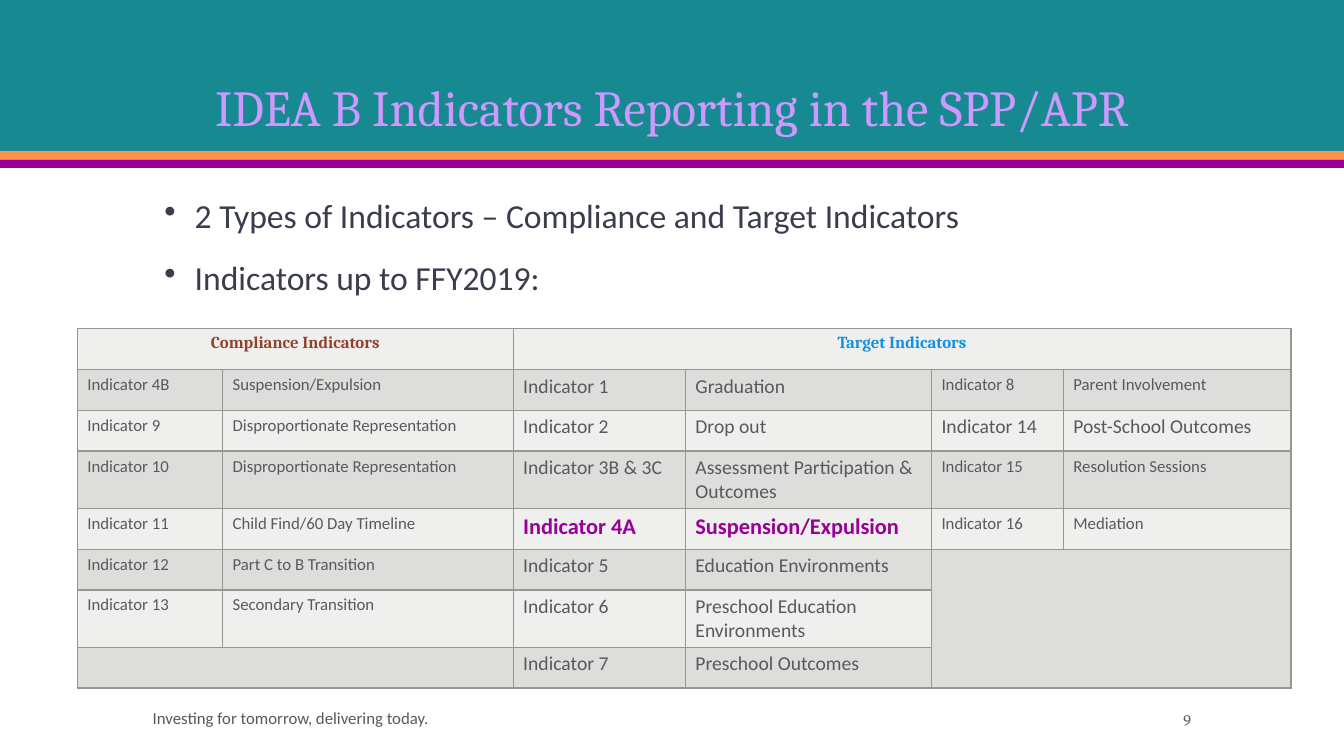
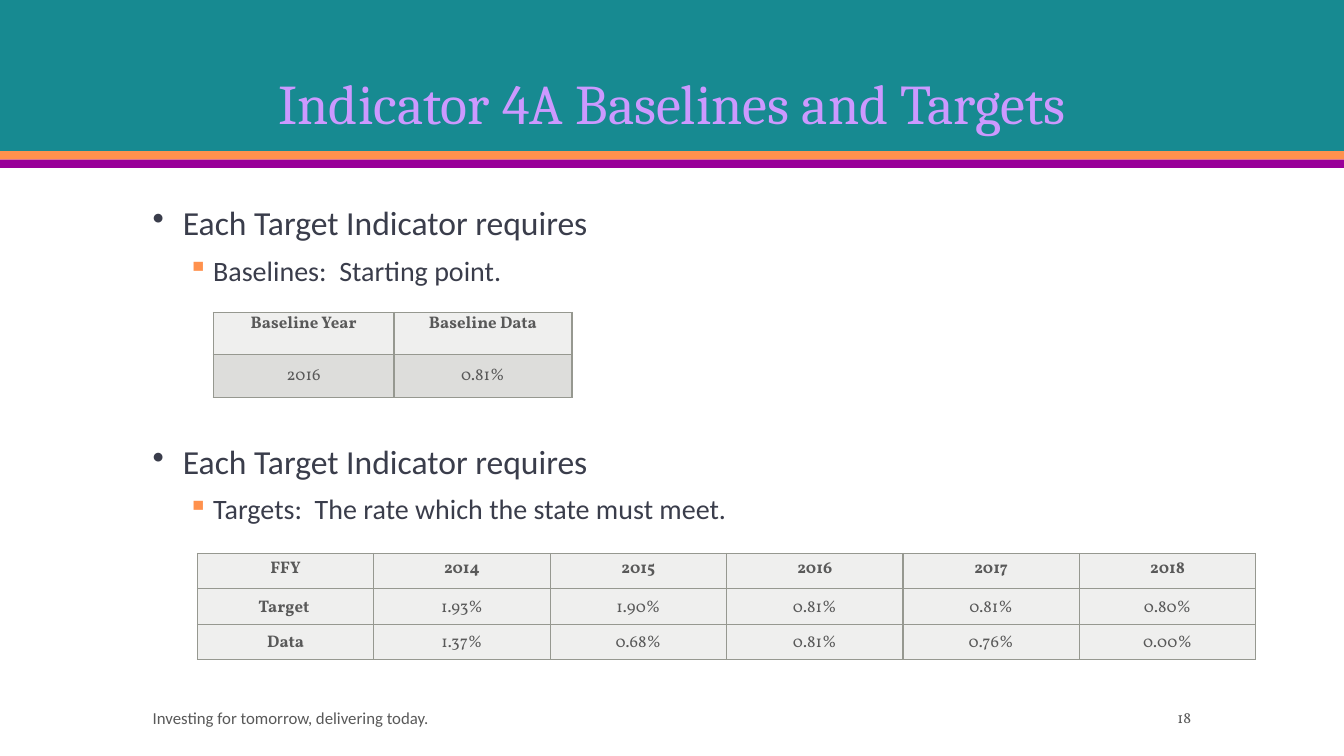
from dataclasses import dataclass
from typing import Callable, Optional

import lxml.etree
import pptx
import pptx.dml.color
import pptx.enum.shapes
import pptx.enum.text
import pptx.oxml.ns
import pptx.presentation
import pptx.slide
import pptx.util

ALIGN = pptx.enum.text.PP_ALIGN
ANCHOR = pptx.enum.text.MSO_ANCHOR


@dataclass(frozen=True)
class Theme:
    teal: str = "178A91"
    orange: str = "FF914D"
    purple: str = "990099"
    lilac: str = "CC99FF"
    ink: str = "3A3D4B"
    grey: str = "595959"
    brown: str = "90442B"
    blue: str = "1191E1"
    border: str = "969890"
    light: str = "EFEFEE"
    shade: str = "DDDDDB"
    sans: str = "Calibri"
    serif: str = "Cambria"
    figures: str = "Vollkorn"
    bullet_size: int = 24
    sub_bullet_size: int = 20
    highlight_size: int = 16
    large_cell_size: int = 14
    small_size: int = 12
    number_size: int = 11


THEME = Theme()

# The slide is a grid of 160 columns by 90 rows of equal squares
COLUMNS, ROWS = 160, 90
SLIDE_HEIGHT = pptx.util.Inches(7.5)


def grid(units: float) -> pptx.util.Emu:
    return pptx.util.Emu(round(SLIDE_HEIGHT * units / ROWS))


@dataclass(frozen=True)
class Area:
    left: float
    top: float
    width: float
    height: float

    def box(self) -> tuple:
        return tuple(map(grid, (self.left, self.top, self.width, self.height)))


@dataclass(frozen=True)
class Style:
    size: float
    font: str
    color: str
    bold: bool = False


@dataclass(frozen=True)
class Band:
    top: float
    height: float
    color: str


@dataclass(frozen=True)
class Bullet:
    text: str
    level: int = 0


@dataclass(frozen=True)
class BulletKind:
    mark: str
    size: int
    margin: float
    hanging: float
    before: int
    color: str


@dataclass(frozen=True)
class TableLook:
    """How the cells of one table are set; style and fill follow row and column."""
    style: Callable[[int, int], Style]
    fill: Callable[[int], str]
    centred: bool = True
    side_inset: float = 0.07
    end_inset: float = 0
    spacing: Optional[int] = 3
    line_spacing: Optional[float] = None


BANDS = (Band(0, 18, THEME.teal), Band(18, 1, THEME.orange), Band(19, 1, THEME.purple))
BULLET_KINDS = (
    BulletKind("•", THEME.bullet_size, 0.3, 0.3, 18, THEME.ink),
    BulletKind("▪", THEME.sub_bullet_size, 0.6, 0.25, 10, THEME.orange),
)
TITLE_AREA = Area(17, 3.4, 126, 13.5)
FOOTER_AREA = Area(17, 83.6, 82, 3.6)
NUMBER_AREA = Area(125, 83.6, 18, 3.6)
FOOTER = "Investing for tomorrow, delivering today."


# Text helpers
def rgb(color: str) -> pptx.dml.color.RGBColor:
    return pptx.dml.color.RGBColor.from_string(color)


def format_runs(paragraph, style: Style) -> None:
    for run in paragraph.runs:
        run.font.size = pptx.util.Pt(style.size)
        run.font.name = style.font
        run.font.bold = style.bold
        run.font.color.rgb = rgb(style.color)


def add_label(slide: pptx.slide.Slide, area: Area, text: str, style: Style, align: ALIGN) -> None:
    frame = slide.shapes.add_textbox(*area.box()).text_frame
    frame.word_wrap = True
    frame.vertical_anchor = ANCHOR.MIDDLE
    frame.text = text
    frame.paragraphs[0].alignment = align
    format_runs(frame.paragraphs[0], style)


def add_bullets(slide: pptx.slide.Slide, area: Area, bullets: tuple) -> None:
    frame = slide.shapes.add_textbox(*area.box()).text_frame
    frame.word_wrap = True
    for index, bullet in enumerate(bullets):
        kind = BULLET_KINDS[bullet.level]
        paragraph = frame.add_paragraph() if index else frame.paragraphs[0]
        paragraph.text = bullet.text
        paragraph.level = bullet.level
        paragraph.line_spacing = 0.9
        paragraph.space_before = pptx.util.Pt(kind.before)
        format_runs(paragraph, Style(kind.size, THEME.sans, THEME.ink))
        properties = paragraph._p.get_or_add_pPr()
        properties.set("marL", str(pptx.util.Inches(kind.margin)))
        properties.set("indent", str(-pptx.util.Inches(kind.hanging)))
        mark_color = lxml.etree.SubElement(properties, pptx.oxml.ns.qn("a:buClr"))
        lxml.etree.SubElement(mark_color, pptx.oxml.ns.qn("a:srgbClr"), val=kind.color)
        lxml.etree.SubElement(properties, pptx.oxml.ns.qn("a:buChar"), char=kind.mark)


# Table helpers
def add_borders(cell) -> None:
    properties = cell._tc.get_or_add_tcPr()
    for side in ("lnL", "lnR", "lnT", "lnB"):
        line = lxml.etree.SubElement(
            properties, pptx.oxml.ns.qn(f"a:{side}"), w=str(pptx.util.Pt(1)))
        fill = lxml.etree.SubElement(line, pptx.oxml.ns.qn("a:solidFill"))
        lxml.etree.SubElement(fill, pptx.oxml.ns.qn("a:srgbClr"), val=THEME.border)


def add_grid_table(slide: pptx.slide.Slide, left: float, top: float, widths: tuple,
                   row_height: float, texts: tuple, look: TableLook):
    area = Area(left, top, sum(widths), row_height * len(texts))
    table = slide.shapes.add_table(len(texts), len(widths), *area.box()).table
    table.first_row = table.horz_banding = False
    for column, width in zip(table.columns, widths):
        column.width = grid(width)
    for row, row_texts in enumerate(texts):
        table.rows[row].height = grid(row_height)
        for column, text in enumerate(row_texts):
            cell = table.cell(row, column)
            add_borders(cell)
            cell.fill.solid()
            cell.fill.fore_color.rgb = rgb(look.fill(row))
            cell.margin_left = cell.margin_right = pptx.util.Inches(look.side_inset)
            cell.margin_top = cell.margin_bottom = pptx.util.Inches(look.end_inset)
            if look.centred and row:
                cell.vertical_anchor = ANCHOR.MIDDLE
            cell.text_frame.text = text
            paragraph = cell.text_frame.paragraphs[0]
            paragraph.alignment = ALIGN.CENTER if look.centred or not row else ALIGN.LEFT
            if look.spacing is not None:
                paragraph.space_before = paragraph.space_after = pptx.util.Pt(look.spacing)
            if look.line_spacing is not None:
                paragraph.line_spacing = look.line_spacing
            format_runs(paragraph, look.style(row, column))
    return table


def banded(row: int) -> str:
    return THEME.shade if row % 2 else THEME.light


# Parts that every slide shares
def add_bands(slide: pptx.slide.Slide) -> None:
    """Draw the header bands and hand them to the slide's layout."""
    for position, band in enumerate(BANDS):
        stripe = slide.shapes.add_shape(
            pptx.enum.shapes.MSO_SHAPE.RECTANGLE,
            *Area(0, band.top, COLUMNS, band.height).box())
        stripe.shadow.inherit = False
        stripe.fill.solid()
        stripe.fill.fore_color.rgb = rgb(band.color)
        stripe.line.fill.background()
        slide.slide_layout.shapes._spTree.insert(2 + position, stripe._element)


def start_slide(deck: pptx.presentation.Presentation, heading: str, size: int,
                number: str) -> pptx.slide.Slide:
    slide = deck.slides.add_slide(deck.slide_layouts[5])
    title = slide.shapes.title
    title.left, title.top, title.width, title.height = TITLE_AREA.box()
    frame = title.text_frame
    frame.text = heading
    frame.word_wrap = True
    frame.auto_size = pptx.enum.text.MSO_AUTO_SIZE.NONE
    frame.vertical_anchor = ANCHOR.BOTTOM
    frame.paragraphs[0].alignment = ALIGN.CENTER
    frame.paragraphs[0].line_spacing = 0.9
    format_runs(frame.paragraphs[0], Style(size, THEME.serif, THEME.lilac))
    add_label(slide, FOOTER_AREA, FOOTER,
              Style(THEME.small_size, THEME.sans, THEME.grey), ALIGN.LEFT)
    add_label(slide, NUMBER_AREA, number,
              Style(THEME.number_size, THEME.figures, THEME.grey), ALIGN.RIGHT)
    return slide


# Slide with the list of indicators
INDICATORS = (
    ("Compliance Indicators", "", "Target Indicators", "", "", ""),
    ("Indicator 4B", "Suspension/Expulsion", "Indicator 1", "Graduation",
     "Indicator 8", "Parent Involvement"),
    ("Indicator 9", "Disproportionate Representation", "Indicator 2", "Drop out",
     "Indicator 14", "Post-School Outcomes"),
    ("Indicator 10", "Disproportionate Representation", "Indicator 3B & 3C",
     "Assessment Participation & Outcomes", "Indicator 15", "Resolution Sessions"),
    ("Indicator 11", "Child Find/60 Day Timeline", "Indicator 4A", "Suspension/Expulsion",
     "Indicator 16", "Mediation"),
    ("Indicator 12", "Part C to B Transition", "Indicator 5", "Education Environments", "", ""),
    ("Indicator 13", "Secondary Transition", "Indicator 6",
     "Preschool Education Environments", "", ""),
    ("", "", "Indicator 7", "Preschool Outcomes", "", ""),
)
# First and last cell of each merged block, as (row, column)
MERGES = (((0, 0), (0, 1)), ((0, 2), (0, 5)), ((5, 4), (7, 5)), ((7, 0), (7, 1)))


def indicator_style(row: int, column: int) -> Style:
    if row == 0:
        color = THEME.blue if column else THEME.brown
        return Style(THEME.small_size, THEME.serif, color, True)
    target = column in (2, 3)
    if target and INDICATORS[row][2] == "Indicator 4A":
        return Style(THEME.highlight_size, THEME.sans, THEME.purple, True)
    large = target or (column > 3 and INDICATORS[row][4] == "Indicator 14")
    return Style(THEME.large_cell_size if large else THEME.small_size, THEME.sans, THEME.grey)


def build_indicators(deck: pptx.presentation.Presentation) -> pptx.slide.Slide:
    slide = start_slide(deck, "IDEA B Indicators Reporting in the SPP/APR", 36, "9")
    look = TableLook(indicator_style, banded, centred=False, side_inset=0.1,
                     end_inset=0.05, spacing=None)
    table = add_grid_table(slide, 9.2, 39.1, (17.3, 34.6, 20.5, 29.3, 15.7, 27.1), 4.87,
                           INDICATORS, look)
    for first, last in MERGES:
        table.cell(*first).merge(table.cell(*last))
    add_bullets(slide, Area(18.4, 23.2, 126, 14), (
        Bullet("2 Types of Indicators – Compliance and Target Indicators"),
        Bullet("Indicators up to FFY2019:")))
    return slide


# Slide with baselines and targets
BASELINE = (("Baseline Year", "Baseline Data"), ("2016", "0.81%"))
TARGETS = (
    ("FFY", "2014", "2015", "2016", "2017", "2018"),
    ("Target ", "1.93%", "1.90%", "0.81%", "0.81%", "0.80%"),
    ("Data", "1.37%", "0.68%", "0.81%", "0.76%", "0.00%"),
)
REQUIREMENTS = ((24, "Baselines:  Starting point."),
                (52.4, "Targets:  The rate which the state must meet."))


def figure_style(bold: bool) -> Style:
    return Style(THEME.small_size, THEME.figures, THEME.grey, bold)


def build_targets(deck: pptx.presentation.Presentation) -> None:
    slide = start_slide(deck, "Indicator 4A Baselines and Targets", 40, "18")
    for top, requirement in REQUIREMENTS:
        add_bullets(slide, Area(17, top, 126, 12),
                    (Bullet("Each Target Indicator requires"), Bullet(requirement, 1)))
    add_grid_table(slide, 25.4, 37.2, (21.5, 21.2), 5.05, BASELINE,
                   TableLook(lambda row, column: figure_style(row == 0), banded))
    add_grid_table(slide, 23.5, 65.9, (21,) * 6, 4.2, TARGETS,
                   TableLook(lambda row, column: figure_style(row == 0 or column == 0),
                             lambda row: THEME.light, line_spacing=1.15))


def main() -> None:
    deck = pptx.Presentation()
    deck.slide_width, deck.slide_height = grid(COLUMNS), SLIDE_HEIGHT
    add_bands(build_indicators(deck))
    build_targets(deck)
    deck.save("out.pptx")


if __name__ == "__main__":
    main()
